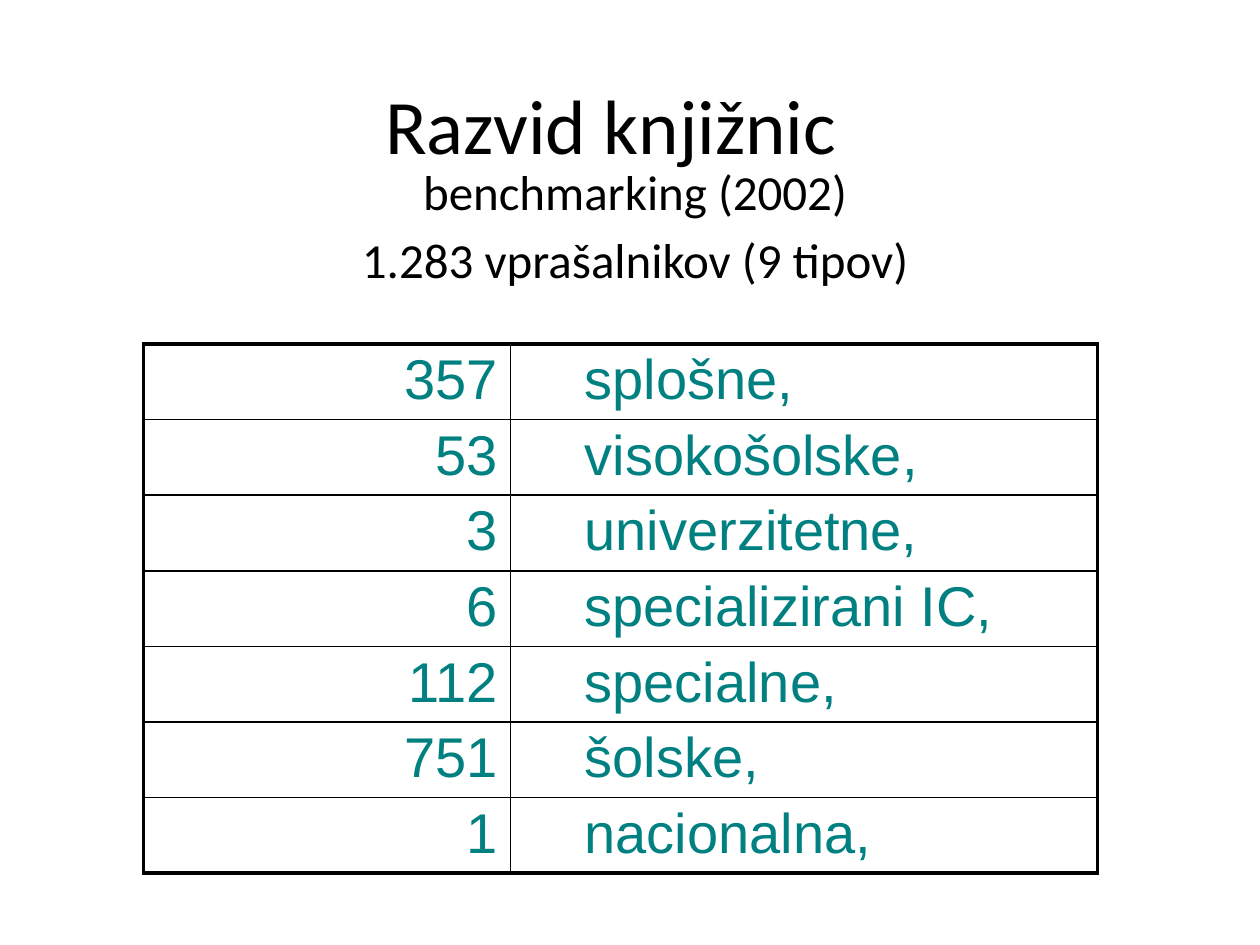
from lxml import etree
from pptx import Presentation
from pptx.dml.color import RGBColor
from pptx.enum import text
from pptx.oxml.ns import qn
from pptx.util import Inches, Pt

BLACK = RGBColor(0x00, 0x00, 0x00)
TEAL = RGBColor(0x00, 0x80, 0x80)
THIN, THICK = Pt(1), Pt(2.25)
LIBRARIES = [
    ("357", "splošne,"),
    ("53", "visokošolske,"),
    ("3", "univerzitetne,"),
    ("6", "specializirani IC,"),
    ("112", "specialne,"),
    ("751", "šolske,"),
    ("1", "nacionalna,"),
]


def format_paragraph(paragraph, align, font_name, size, color):
    paragraph.alignment = align
    for span in paragraph.runs:
        span.font.name = font_name
        span.font.size = Pt(size)
        span.font.color.rgb = color


def set_borders(cell, widths):
    """Draw black cell borders; widths run left, right, top, bottom."""
    properties = cell._tc.get_or_add_tcPr()
    for index, (side, width) in enumerate(zip("LRTB", widths)):
        line = etree.Element(qn(f"a:ln{side}"), w=str(width))
        fill = etree.SubElement(line, qn("a:solidFill"))
        etree.SubElement(fill, qn("a:srgbClr"), val=str(BLACK))
        properties.insert(index, line)


deck = Presentation()
deck.slide_width, deck.slide_height = Inches(10), Inches(7.5)
page = deck.slides.add_slide(deck.slide_layouts[1])

title = page.shapes.title
title.left, title.top = Inches(0.35), Inches(0.36)
title.width, title.height = Inches(9), Inches(1.25)
title.text_frame.text = "Razvid knjižnic"
format_paragraph(title.text_frame.paragraphs[0], text.PP_ALIGN.CENTER, "Calibri", 44, BLACK)

body = page.placeholders[1]
body.left, body.top = Inches(1.14), Inches(1.23)
body.width, body.height = Inches(7.8), Inches(1.57)
body.text_frame.text = "benchmarking (2002)\n1.283 vprašalnikov (9 tipov)"
for paragraph in body.text_frame.paragraphs:
    format_paragraph(paragraph, text.PP_ALIGN.CENTER, "Calibri", 28, BLACK)
    properties = paragraph._p.get_or_add_pPr()
    properties.set("marL", "0")
    properties.set("indent", "0")
    etree.SubElement(properties, qn("a:buNone"))

row_count = len(LIBRARIES)
table = page.shapes.add_table(
    row_count, 2, Inches(1.14), Inches(2.73), Inches(7.57), Inches(0.6) * row_count
).table
table.first_row = table.horz_banding = False
table.columns[0].width = Inches(2.91)
table.columns[1].width = Inches(4.66)

for row, values in enumerate(LIBRARIES):
    for column, value in enumerate(values):
        cell = table.cell(row, column)
        cell.text_frame.text = value
        cell.margin_top = cell.margin_bottom = Inches(0.04)
        cell.margin_left = Inches(0.59 if column else 0.1)
        cell.fill.background()
        align = text.PP_ALIGN.LEFT if column else text.PP_ALIGN.RIGHT
        format_paragraph(cell.text_frame.paragraphs[0], align, "Arial", 32, TEAL)
        on_edge = (column == 0, column == 1, row == 0, row == row_count - 1)
        set_borders(cell, [THICK if edge else THIN for edge in on_edge])

deck.save("out.pptx")
